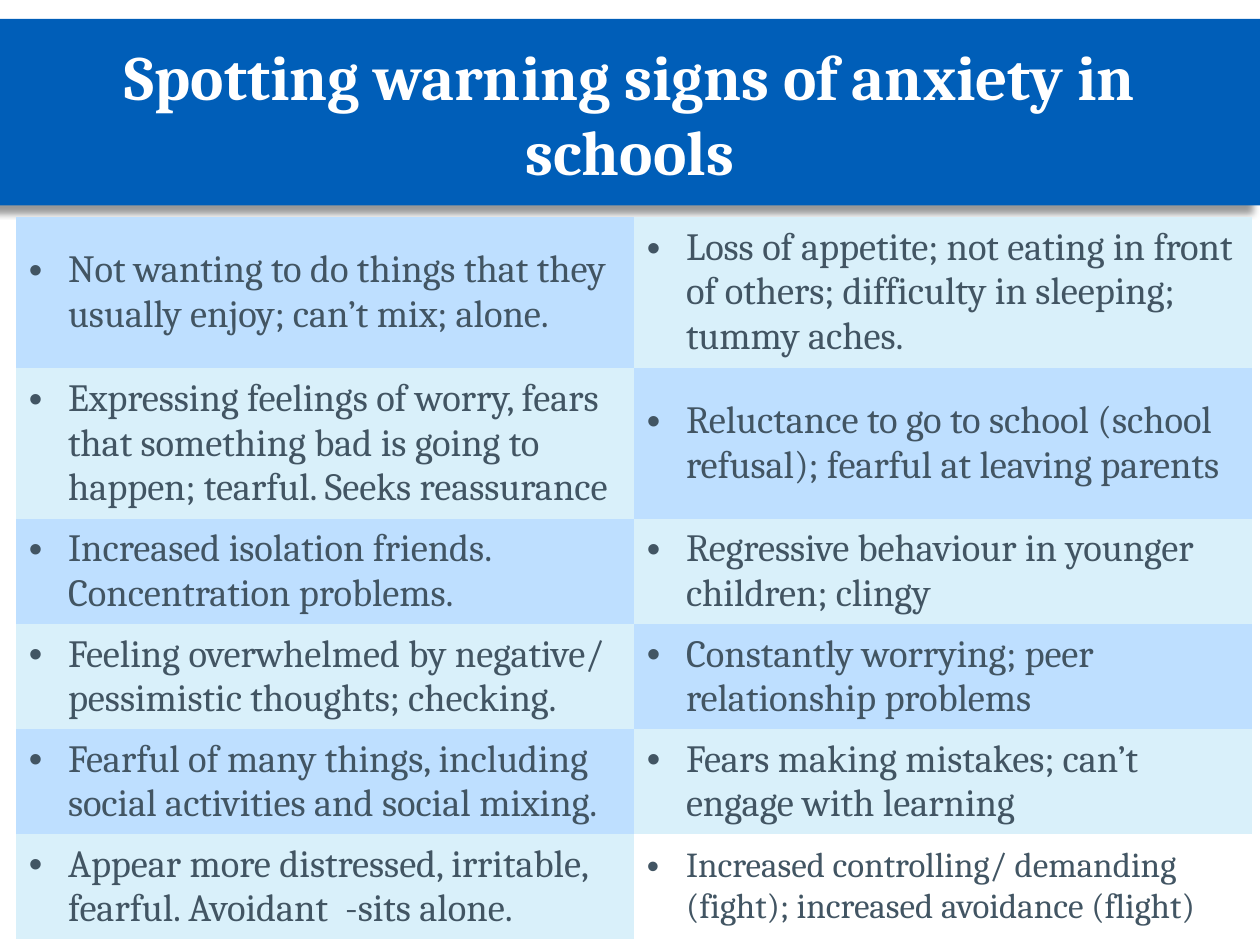
from lxml import etree
from pptx import Presentation
from pptx.dml.color import RGBColor
from pptx.enum.shapes import MSO_SHAPE
from pptx.enum.text import MSO_ANCHOR, PP_ALIGN
from pptx.oxml.ns import qn
from pptx.util import Inches, Pt

RECTANGLE = MSO_SHAPE.RECTANGLE
MIDDLE = MSO_ANCHOR.MIDDLE
CENTER = PP_ALIGN.CENTER

BLUE = RGBColor(0x00, 0x5E, 0xB8)
WHITE = RGBColor(0xFF, 0xFF, 0xFF)
SLATE = RGBColor(0x42, 0x55, 0x63)
SKY = RGBColor(0xBE, 0xDF, 0xFF)
PALE = RGBColor(0xD9, 0xF0, 0xFA)

FONT = "Cambria"
PLAIN_TABLE_STYLE = "{2D5ABB26-0587-4C30-8999-92F81FD0307C}"
ROW_HEIGHTS = [1.16, 1.16, 0.82, 0.82, 0.82, 0.82]
WARNING_SIGNS = [
    ("Not wanting to do things that they usually enjoy; can’t mix; alone.",
     "Loss of appetite; not eating in front of others; difficulty in sleeping; tummy aches."),
    ("Expressing feelings of worry, fears that something bad is going to happen; tearful. Seeks reassurance",
     "Reluctance to go to school (school refusal); fearful at leaving parents"),
    ("Increased isolation friends. Concentration problems.",
     "Regressive behaviour in younger children; clingy"),
    ("Feeling overwhelmed by negative/ pessimistic thoughts; checking.",
     "Constantly worrying; peer relationship problems"),
    ("Fearful of many things, including social activities and social mixing.",
     "Fears making mistakes; can’t engage with learning"),
    ("Appear more distressed, irritable, fearful. Avoidant  -sits alone.",
     "Increased controlling/ demanding (fight); increased avoidance (flight)"),
]


def style_text(paragraph, size, color, bold=False):
    """Format every run of a paragraph."""
    for run in paragraph.runs:
        run.font.name = FONT
        run.font.size = Pt(size)
        run.font.bold = bold
        run.font.color.rgb = color


def add_bullet(paragraph):
    """Give a paragraph a hanging round bullet."""
    properties = paragraph._p.get_or_add_pPr()
    properties.set("marL", str(Inches(0.31)))
    properties.set("indent", str(-Inches(0.31)))
    etree.SubElement(properties, qn("a:buFont"), typeface="Arial")
    etree.SubElement(properties, qn("a:buChar"), char="•")


def add_drop_shadow(shape):
    """Cast a soft shadow down and to the left of a shape."""
    shape.shadow.inherit = False
    effects = shape._element.spPr.find(qn("a:effectLst"))
    shadow = etree.SubElement(
        effects, qn("a:outerShdw"), blurRad=str(Pt(4)), dist=str(Pt(6)),
        dir=str(135 * 60000), algn="tr", rotWithShape="0")
    black = etree.SubElement(shadow, qn("a:srgbClr"), val="000000")
    etree.SubElement(black, qn("a:alpha"), val="40000")


def add_header(slide, left, top, width, height):
    """Place the blue band and the heading on it."""
    band = slide.shapes.add_shape(RECTANGLE, left, top, width, height)
    band.fill.solid()
    band.fill.fore_color.rgb = BLUE
    band.line.fill.background()
    add_drop_shadow(band)

    margin = Inches(0.13)
    heading = slide.shapes.add_textbox(
        left + margin, top + Inches(0.12), width - 2 * margin, Inches(1.25))
    frame = heading.text_frame
    frame.word_wrap = True
    frame.vertical_anchor = MIDDLE
    frame.text = "Spotting warning signs of anxiety in schools"
    frame.paragraphs[0].alignment = CENTER
    style_text(frame.paragraphs[0], 36, WHITE, bold=True)


def add_signs_table(slide, left, top, width, height):
    """Place the checkered table of warning signs."""
    signs = slide.shapes.add_table(
        len(WARNING_SIGNS), 2, left, top, width, height).table
    signs.first_row = False
    signs.horz_banding = False
    signs._tbl.tblPr.find(qn("a:tableStyleId")).text = PLAIN_TABLE_STYLE
    last = (len(WARNING_SIGNS) - 1, 1)

    for row, (row_height, pair) in enumerate(zip(ROW_HEIGHTS, WARNING_SIGNS)):
        signs.rows[row].height = Inches(row_height)
        for column, sign in enumerate(pair):
            cell = signs.cell(row, column)
            cell.vertical_anchor = MIDDLE
            is_last = (row, column) == last
            if is_last:
                cell.fill.background()
            else:
                cell.fill.solid()
                cell.fill.fore_color.rgb = PALE if (row + column) % 2 else SKY
            paragraph = cell.text_frame.paragraphs[0]
            paragraph.text = sign
            add_bullet(paragraph)
            style_text(paragraph, 20 if is_last else 22, SLATE)


def main():
    """Build and save the slide."""
    presentation = Presentation()
    presentation.slide_width = Inches(10)
    presentation.slide_height = Inches(7.5)
    slide = presentation.slides.add_slide(presentation.slide_layouts[6])
    add_header(slide, Inches(0), Inches(0.15), Inches(10), Inches(1.48))
    add_signs_table(slide, Inches(0.13), Inches(1.72), Inches(9.81), Inches(sum(ROW_HEIGHTS)))
    presentation.save("out.pptx")


if __name__ == "__main__":
    main()
